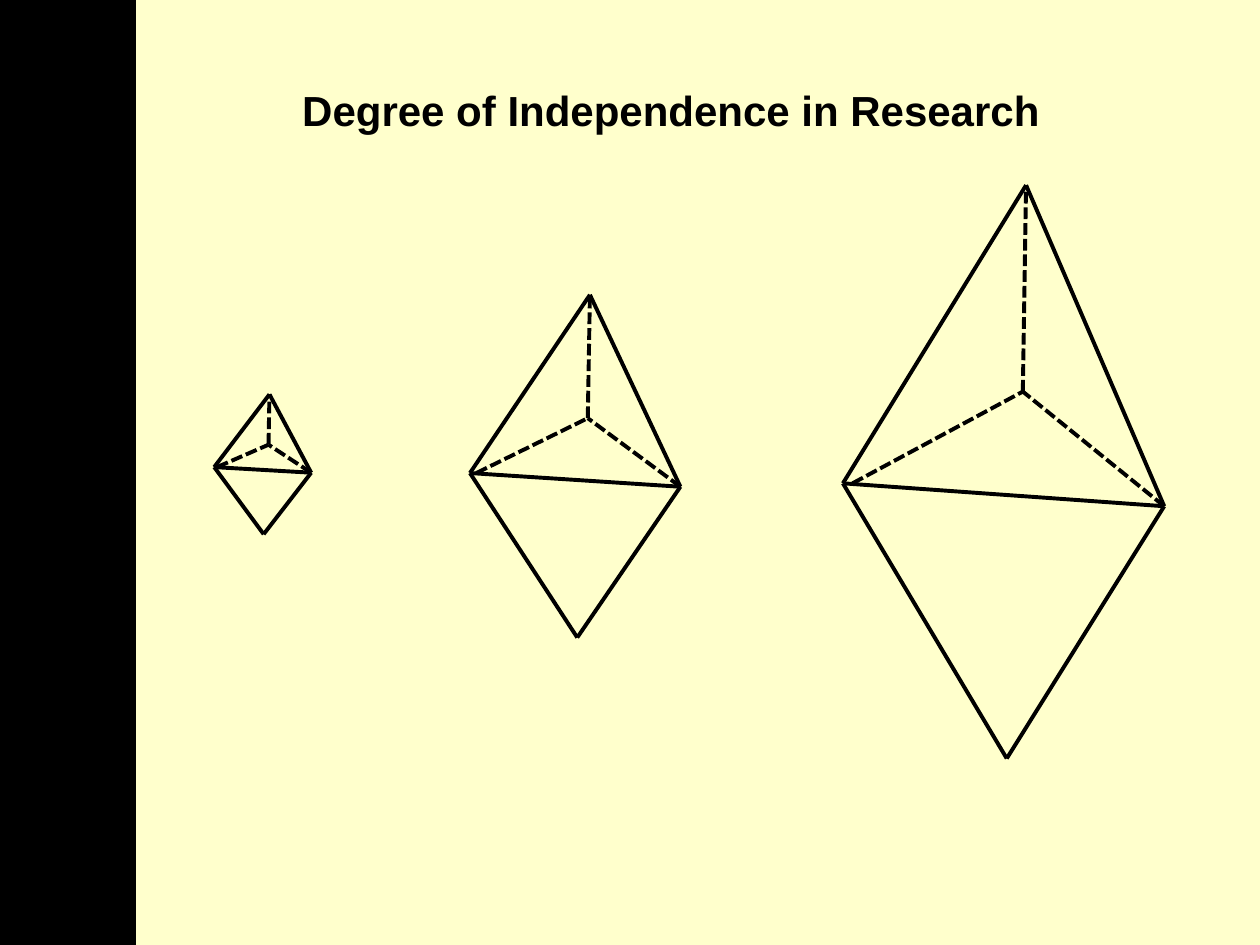
from dataclasses import dataclass

from pptx import Presentation
from pptx.dml.color import RGBColor
from pptx.enum.dml import MSO_LINE_DASH_STYLE as Dash
from pptx.enum.shapes import MSO_CONNECTOR as Connector, MSO_SHAPE as Shape
from pptx.enum.text import MSO_ANCHOR as Anchor, MSO_AUTO_SIZE as AutoSize, PP_ALIGN as Align
from pptx.oxml.ns import qn
from pptx.util import Inches, Pt


@dataclass(frozen=True)
class Theme:
    paper: RGBColor = RGBColor(0xFF, 0xFF, 0xCC)
    ink: RGBColor = RGBColor(0, 0, 0)
    font: str = "Arial"
    title_size: Pt = Pt(24)
    band_line: Pt = Pt(2)
    edge_line: Pt = Pt(2.25)


# Corners as shares of the figure's width and height
CORNERS = {
    "top": (0.57, 0),
    "left": (0, 0.52),
    "left inset": (0.03, 0.52),
    "right": (1, 0.56),
    "back": (0.56, 0.36),
    "bottom": (0.51, 1),
}
FRONT_EDGES = [("top", "left"), ("top", "right"), ("bottom", "right"),
               ("bottom", "left"), ("right", "left")]
HIDDEN_EDGES = [("right", "back"), ("left inset", "back"), ("back", "top")]

# Left, top, width and height of each figure in grid units
FIGURES = [
    (17, 31.3, 7.7, 11.1),
    (37.3, 23.4, 16.7, 27.2),
    (66.9, 14.7, 25.5, 45.5),
]


class SlideBuilder:
    """Draws on one slide with a grid of 100 columns and 75 rows."""

    COLUMNS, ROWS = 100, 75

    def __init__(self, deck, theme):
        self.deck, self.theme = deck, theme
        self.page = deck.slides.add_slide(deck.slide_layouts[5])
        background = self.page.background.fill
        background.solid()
        background.fore_color.rgb = theme.paper

    def across(self, columns):
        return round(self.deck.slide_width * columns / self.COLUMNS)

    def down(self, rows):
        return round(self.deck.slide_height * rows / self.ROWS)

    def area(self, left, top, width, height):
        return self.across(left), self.down(top), self.across(width), self.down(height)

    def title(self, text, *place):
        box = self.page.shapes.title
        box.left, box.top, box.width, box.height = self.area(*place)
        frame = box.text_frame
        frame.word_wrap = True
        frame.auto_size = AutoSize.SHAPE_TO_FIT_TEXT
        frame.vertical_anchor = Anchor.TOP
        para = frame.paragraphs[0]
        para.alignment = Align.CENTER
        span = para.add_run()
        span.text = text
        span.font.name, span.font.size = self.theme.font, self.theme.title_size
        span.font.bold = True
        span.font.color.rgb = self.theme.ink

    def band(self, *place):
        bar = self.page.shapes.add_shape(Shape.RECTANGLE, *self.area(*place))
        bar.shadow.inherit = False
        bar.fill.solid()
        bar.fill.fore_color.rgb = bar.line.color.rgb = self.theme.ink
        bar.line.width = self.theme.band_line

    def edge(self, shapes, start, end, dash):
        line = shapes.add_connector(
            Connector.STRAIGHT,
            self.across(start[0]), self.down(start[1]),
            self.across(end[0]), self.down(end[1]))
        line.line.color.rgb = self.theme.ink
        line.line.width = self.theme.edge_line
        line.line.dash_style = dash
        properties = line._element.spPr
        properties.append(properties.makeelement(qn("a:effectLst"), {}))

    def bipyramid(self, left, top, width, height):
        corners = {name: (left + x * width, top + y * height)
                   for name, (x, y) in CORNERS.items()}
        group = self.page.shapes.add_group_shape()
        for edges, dash in ((FRONT_EDGES, Dash.SOLID), (HIDDEN_EDGES, Dash.SQUARE_DOT)):
            for start, end in edges:
                self.edge(group.shapes, corners[start], corners[end], dash)


def main():
    deck = Presentation()
    deck.slide_width, deck.slide_height = Inches(10), Inches(7.5)
    slide = SlideBuilder(deck, Theme())

    # Side band and heading
    slide.band(0, 0, 10.7, 75)
    slide.title("Degree of Independence in Research", 14.4, 6.2, 77.7, 5)

    # Three growing figures
    for place in FIGURES:
        slide.bipyramid(*place)

    deck.save("out.pptx")


if __name__ == "__main__":
    main()
